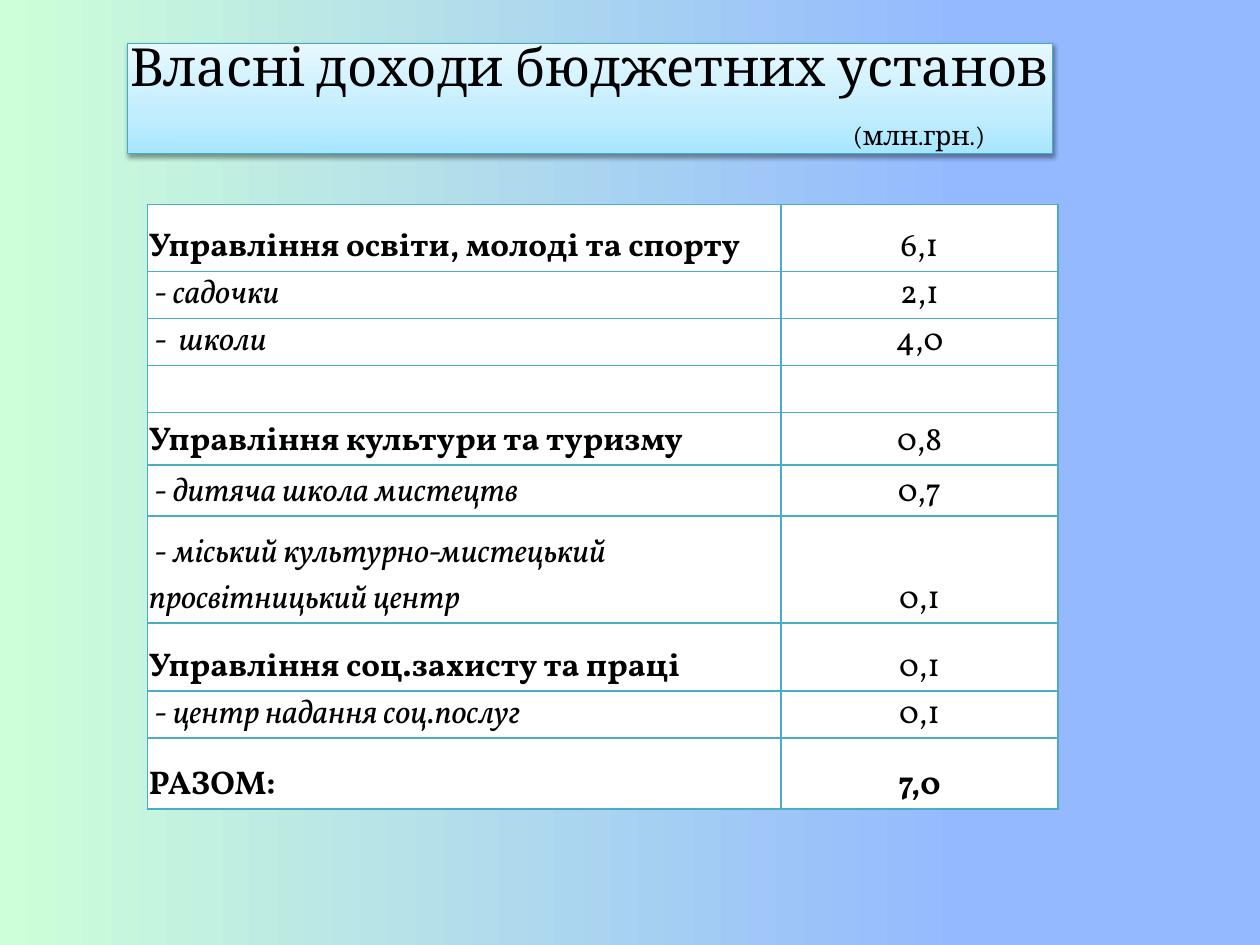
from copy import deepcopy

from lxml.etree import SubElement
from pptx import Presentation
from pptx.dml.color import RGBColor
from pptx.enum.shapes import MSO_SHAPE
from pptx.enum.text import MSO_ANCHOR, PP_ALIGN
from pptx.oxml.ns import qn
from pptx.util import Pt

BLACK = RGBColor(0x00, 0x00, 0x00)
WHITE = RGBColor(0xFF, 0xFF, 0xFF)
GRID = RGBColor(0x4B, 0xAC, 0xC6)
TITLE_EDGE = RGBColor(0x46, 0xAA, 0xC5)
SKY = RGBColor(0xA7, 0xE6, 0xFF)
PALE_SKY = RGBColor(0xC1, 0xED, 0xFF)
ICE = RGBColor(0xE7, 0xF8, 0xFF)
MINT = RGBColor(0xCD, 0xFF, 0xD8)
PERIWINKLE = RGBColor(0x94, 0xB9, 0xFF)

HEADING = {"bold": True}
DETAIL = {"italic": True}
INCOME = [
    (41, "Управління освіти, молоді та спорту", "6,1", HEADING, {}),
    (25, " - садочки", "2,1", DETAIL, {}),
    (24.5, " -  школи", "4,0", DETAIL, {}),
    (25, "", "", {}, {}),
    (32, "Управління культури та туризму", "0,8", HEADING, {}),
    (31, " - дитяча школа мистецтв", "0,7", DETAIL, {}),
    (65.3, " - міський культурно-мистецький просвітницький центр", "0,1", DETAIL, {}),
    (41.4, "Управління соц.захисту та праці", "0,1", HEADING, {}),
    (28.8, " - центр надання соц.послуг", "0,1", DETAIL, {}),
    (43.2, "РАЗОМ:", "7,0", HEADING, HEADING),
]


def apply(target, formats):
    """Set every attribute named in formats on target."""
    for name, value in formats.items():
        setattr(target, name, value)


def paint_gradient(fill, holder, stops, angle):
    """Fill with (position, colour) stops at a counter-clockwise angle."""
    fill.gradient()
    fill.gradient_angle = angle
    stop_list = next(holder.iter(qn("a:gsLst")))
    for _ in stops[2:]:
        stop_list.append(deepcopy(stop_list[-1]))
    for stop, (position, colour) in zip(fill.gradient_stops, stops):
        stop.position = position
        stop.color.rgb = colour


def add_soft_shadow(shape):
    """Give the shape a soft shadow that falls straight down."""
    shape.shadow.inherit = False
    effects = shape.element.spPr.find(qn("a:effectLst"))
    shadow = SubElement(effects, qn("a:outerShdw"), blurRad=str(Pt(3.1)),
                        dist=str(Pt(1.6)), dir="5400000", rotWithShape="0")
    colour = SubElement(shadow, qn("a:srgbClr"), val=str(BLACK))
    SubElement(colour, qn("a:alpha"), val="38000")


def add_title(slide):
    """Add the heading panel with its unit of measure."""
    panel = slide.shapes.add_shape(MSO_SHAPE.RECTANGLE, Pt(77.8), Pt(26.6), Pt(563.8), Pt(67))
    paint_gradient(panel.fill, panel.element, [(0, SKY), (0.35, PALE_SKY), (1, ICE)], 90)
    panel.line.color.rgb = TITLE_EDGE
    panel.line.width = Pt(0.75)
    add_soft_shadow(panel)
    frame = panel.text_frame
    apply(frame, {"margin_left": 0, "margin_right": 0, "margin_top": 0, "margin_bottom": 0,
                  "word_wrap": True, "vertical_anchor": MSO_ANCHOR.TOP})
    heading, unit = frame.paragraphs[0], frame.add_paragraph()
    for paragraph, text, size in ((heading, "Власні доходи бюджетних установ", 32),
                                  (unit, "(млн.грн.)", 16)):
        apply(paragraph, {"alignment": PP_ALIGN.CENTER, "line_spacing": Pt(32.5)})
        run = paragraph.add_run()
        run.text = text
        apply(run.font, {"name": "Cambria", "size": Pt(size)})
        run.font.color.rgb = BLACK
    unit._p.get_or_add_pPr().set("marL", str(Pt(401)))


def add_borders(cell):
    """Draw a thin line on all four sides of the cell."""
    properties = cell._tc.get_or_add_tcPr()
    for index, side in enumerate(("a:lnL", "a:lnR", "a:lnT", "a:lnB")):
        line = SubElement(properties, qn(side), w=str(Pt(1)))
        SubElement(SubElement(line, qn("a:solidFill")), qn("a:srgbClr"), val=str(GRID))
        properties.insert(index, line)


def fill_cell(cell, text, alignment, style):
    """Write and format one table cell."""
    cell.fill.solid()
    cell.fill.fore_color.rgb = WHITE
    apply(cell, {"margin_left": Pt(0.7), "margin_right": Pt(0.7), "margin_top": Pt(0.7),
                 "margin_bottom": 0, "vertical_anchor": MSO_ANCHOR.BOTTOM})
    add_borders(cell)
    cell.text = text
    paragraph = cell.text_frame.paragraphs[0]
    paragraph.alignment = alignment
    for part in (paragraph, *paragraph.runs):
        apply(part.font, {"name": "Vollkorn", "size": Pt(20), "bold": False, **style})
        part.font.color.rgb = BLACK


def add_income_table(slide):
    """Add the table of own income by institution."""
    height = sum(row[0] for row in INCOME)
    table = slide.shapes.add_table(len(INCOME), 2, Pt(90), Pt(124.5), Pt(555), Pt(height)).table
    apply(table, {"first_row": False, "horz_banding": False})
    for column, width in zip(table.columns, (386, 169)):
        column.width = Pt(width)
    for row, (height, source, amount, source_style, amount_style) in zip(table.rows, INCOME):
        row.height = Pt(height)
        fill_cell(row.cells[0], source, PP_ALIGN.LEFT, source_style)
        fill_cell(row.cells[1], amount, PP_ALIGN.CENTER, amount_style)


def main():
    """Build and save the slide."""
    presentation = Presentation()
    apply(presentation, {"slide_width": Pt(768), "slide_height": Pt(576)})
    slide = presentation.slides.add_slide(presentation.slide_layouts[6])
    paint_gradient(slide.background.fill, slide.element, [(0, MINT), (0.77, PERIWINKLE)], 0)
    add_title(slide)
    add_income_table(slide)
    presentation.save("out.pptx")


if __name__ == "__main__":
    main()
